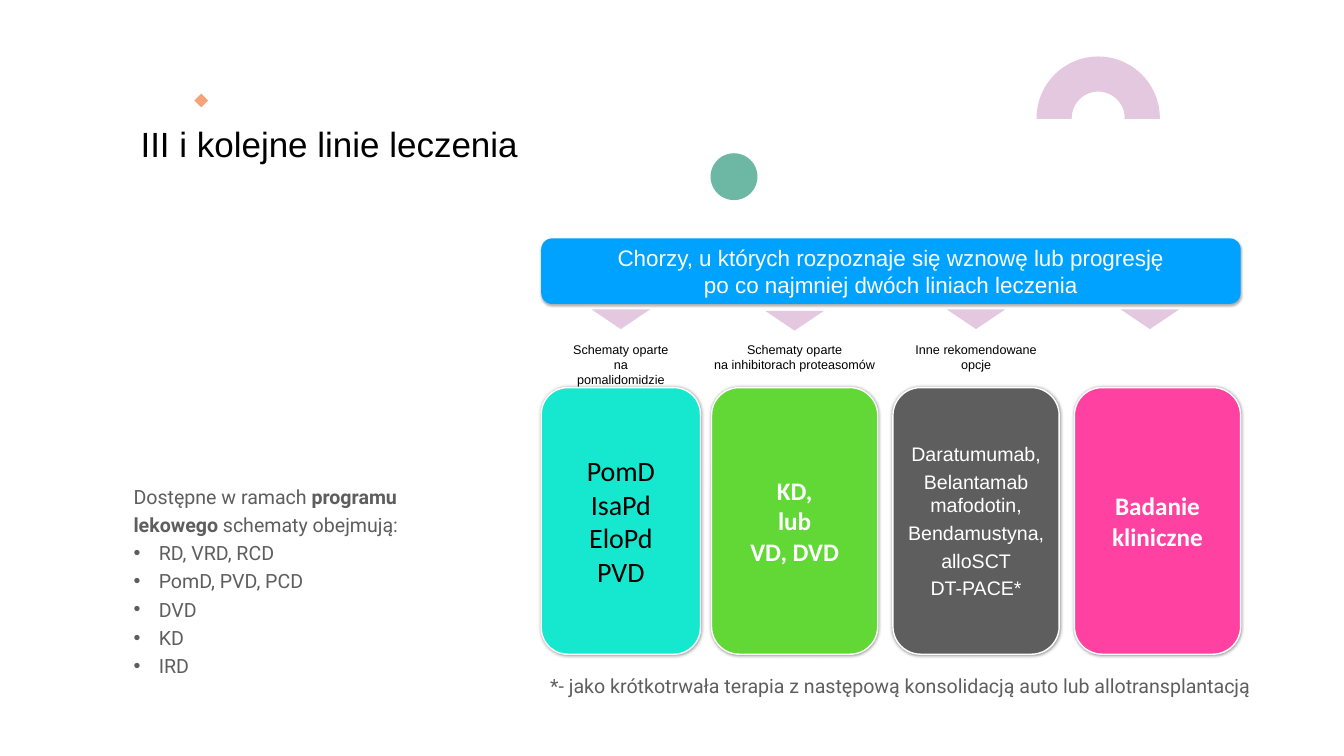
from dataclasses import dataclass
from math import cos, pi, sin
from typing import Optional

from lxml.etree import SubElement
from pptx import Presentation
from pptx.dml.color import RGBColor as RGB
from pptx.enum.shapes import MSO_SHAPE as SHAPE
from pptx.enum.text import MSO_ANCHOR as ANCHOR, PP_ALIGN as ALIGN
from pptx.oxml.ns import qn
from pptx.util import Inches, Pt

SLIDE_W, SLIDE_H = Inches(26.67), Inches(15)
COL, ROW = SLIDE_W / 100, SLIDE_H / 100

BLACK, WHITE, GREY = "000000", "FFFFFF", "5E5E5E"
LILAC, GREEN, ORANGE, BLUE = "E4C8E0", "6DB8A4", "F5A479", "00A2FF"


@dataclass
class Box:
    col: float
    row: float
    cols: float
    rows: float

    def emu(self) -> tuple:
        return (round(self.col * COL), round(self.row * ROW),
                round(self.cols * COL), round(self.rows * ROW))


@dataclass
class Shadow:
    alpha: int
    blur: float
    dist: float = 0
    angle: int = 0


@dataclass
class Option:
    col: float
    cols: float
    fill: str
    lines: list
    style: dict
    label: str = ""
    label_cols: float = 0
    arrow_row: float = 40.93
    arrow_shift: float = 0


def set_fill(sp, color: str) -> None:
    sp.fill.solid()
    sp.fill.fore_color.rgb = RGB.from_string(color)


def put_text(tf, paragraphs: list, *, size: float, font: str = "Arial",
             color: str = BLACK, bold: bool = False, align=ALIGN.CENTER,
             anchor=ANCHOR.MIDDLE, wrap: bool = True, after: float = 0,
             spacing: Optional[float] = None, inset: Optional[float] = None,
             bullets_from: int = 99) -> None:
    tf.word_wrap = wrap
    tf.vertical_anchor = anchor
    if inset is not None:
        tf.margin_left = tf.margin_right = Inches(inset)
        tf.margin_top = tf.margin_bottom = Inches(inset)
    for i, text in enumerate(paragraphs):
        p = tf.add_paragraph() if i else tf.paragraphs[0]
        if i >= bullets_from:
            pPr = p._p.get_or_add_pPr()
            pPr.set("marL", str(Inches(0.5)))
            pPr.set("indent", str(-Inches(0.5)))
            SubElement(pPr, qn("a:buFont"), typeface="Arial")
            SubElement(pPr, qn("a:buChar"), char="•")
        p.alignment = align
        if after:
            p.space_after = Pt(after)
        if spacing:
            p.line_spacing = spacing
        for j, line in enumerate(text.split("\n")):
            if j:
                p.add_line_break()
            for k, part in enumerate(line.split("**")):
                r = p.add_run()
                r.text = part
                r.font.size = Pt(size)
                r.font.name = font
                r.font.bold = bold or k % 2 == 1
                r.font.color.rgb = RGB.from_string(color)


def add_shape(slide, kind, box: Box, fill: str, line: Optional[str] = None,
              shadow: Optional[Shadow] = None):
    sp = slide.shapes.add_shape(kind, *box.emu())
    set_fill(sp, fill)
    sp.shadow.inherit = False
    if line:
        sp.line.color.rgb = RGB.from_string(line)
        sp.line.width = Pt(2)
    else:
        sp.line.fill.background()
    if shadow:
        effects = sp._element.spPr.find(qn("a:effectLst"))
        outer = SubElement(effects, qn("a:outerShdw"), blurRad=str(Pt(shadow.blur)),
                           dist=str(Pt(shadow.dist)), dir=str(shadow.angle * 60000),
                           rotWithShape="0")
        clr = SubElement(outer, qn("a:srgbClr"), val=BLACK)
        SubElement(clr, qn("a:alpha"), val=str(shadow.alpha * 1000))
    return sp


def add_textbox(slide, box: Box, paragraphs: list, **style) -> None:
    put_text(slide.shapes.add_textbox(*box.emu()).text_frame, paragraphs, **style)


def add_arch(slide, box: Box, hole: float, fill: str, steps: int = 48) -> None:
    left, top, width, height = box.emu()
    radius = width / 2
    cx, cy, bottom = left + radius, top + radius, top + height

    def arc(r: float) -> list:
        curve = [(cx - r * cos(pi * i / steps), cy - r * sin(pi * i / steps))
                 for i in range(steps + 1)]
        return [(cx - r, bottom)] + curve + [(cx + r, bottom)]

    points = arc(radius) + arc(radius * hole)[::-1]
    builder = slide.shapes.build_freeform(*map(round, points[0]))
    builder.add_line_segments([(round(x), round(y)) for x, y in points[1:]])
    sp = builder.convert_to_shape()
    set_fill(sp, fill)
    sp.line.fill.background()
    sp.shadow.inherit = False


def add_option(slide, o: Option) -> None:
    center = o.col + o.cols / 2
    if o.label:
        add_textbox(slide, Box(center - o.label_cols / 2, 44.87, o.label_cols, 4.73),
                    [o.label], size=18, anchor=ANCHOR.TOP, wrap="\n" not in o.label)
    card = add_shape(slide, SHAPE.ROUNDED_RECTANGLE, Box(o.col, 51.27, o.cols, 35.27),
                     o.fill, WHITE, Shadow(40, 5))
    put_text(card.text_frame, o.lines, **o.style)
    arrow = add_shape(slide, SHAPE.ISOSCELES_TRIANGLE,
                      Box(center + o.arrow_shift - 2.18, o.arrow_row, 4.35, 2.6), LILAC)
    arrow._element.spPr.find(qn("a:xfrm")).set("flipV", "1")


STRONG = dict(size=36, font="Calibri", color=WHITE, bold=True)
NOTE = dict(size=28, font="Roboto", color=GREY, align=ALIGN.LEFT, spacing=1.2)

OPTIONS = [
    Option(40.27, 11.85, "16E7CF", ["PomD", "IsaPd", "EloPd", "PVD"],
           dict(size=40, font="Calibri"),
           "Schematy oparte na pomalidomidzie", 8.55),
    Option(52.94, 12.37, "61D836", ["KD,", "lub\nVD, DVD"], STRONG,
           "Schematy oparte\nna inhibitorach proteasomów", 12.86, arrow_row=41.13),
    Option(66.44, 12.37, GREY,
           ["Daratumumab,", "Belantamab mafodotin,", "Bendamustyna,", "alloSCT",
            "DT-PACE*"],
           dict(size=28, color=WHITE, after=6),
           "Inne rekomendowane\nopcje", 9.86),
    Option(79.94, 12.37, "FF42A1", ["Badanie kliniczne"], STRONG, arrow_shift=-0.56),
]


def main() -> None:
    prs = Presentation()
    prs.slide_width, prs.slide_height = SLIDE_W, SLIDE_H
    slide = prs.slides.add_slide(prs.slide_layouts[5])

    add_arch(slide, Box(77.13, 7.47, 9.17, 8.27), 0.43, LILAC)
    add_shape(slide, SHAPE.OVAL, Box(52.87, 20.27, 3.49, 6.2), GREEN)
    add_shape(slide, SHAPE.DIAMOND, Box(14.47, 12.4, 1.01, 1.8), ORANGE)

    title = slide.shapes.title
    title.left, title.top, title.width, title.height = Box(10.46, 14.4, 79.04, 9.13).emu()
    put_text(title.text_frame, ["III i kolejne linie leczenia"], size=50,
             align=ALIGN.LEFT, inset=0)

    header = add_shape(slide, SHAPE.ROUNDED_RECTANGLE, Box(40.27, 31.53, 52.04, 8.67),
                       BLUE, shadow=Shadow(32, 3.5, 2.2, 90))
    put_text(header.text_frame,
             ["Chorzy, u których rozpoznaje się wznowę lub progresję\n"
              "po co najmniej dwóch liniach leczenia"], size=32, color=WHITE)

    for option in OPTIONS:
        add_option(slide, option)

    add_textbox(slide, Box(40.57, 88.13, 59.3, 4.2),
                ["*- jako krótkotrwała terapia z następową konsolidacją "
                 "auto lub allotransplantacją"], anchor=ANCHOR.TOP, **NOTE)
    add_textbox(slide, Box(9.64, 62.8, 25.68, 27.47),
                ["Dostępne w ramach **programu lekowego **schematy obejmują:",
                 "RD, VRD, RCD", "PomD, PVD, PCD", "DVD", "KD", "IRD"],
                inset=0.08, bullets_from=1, **NOTE)

    prs.save("out.pptx")


if __name__ == "__main__":
    main()
